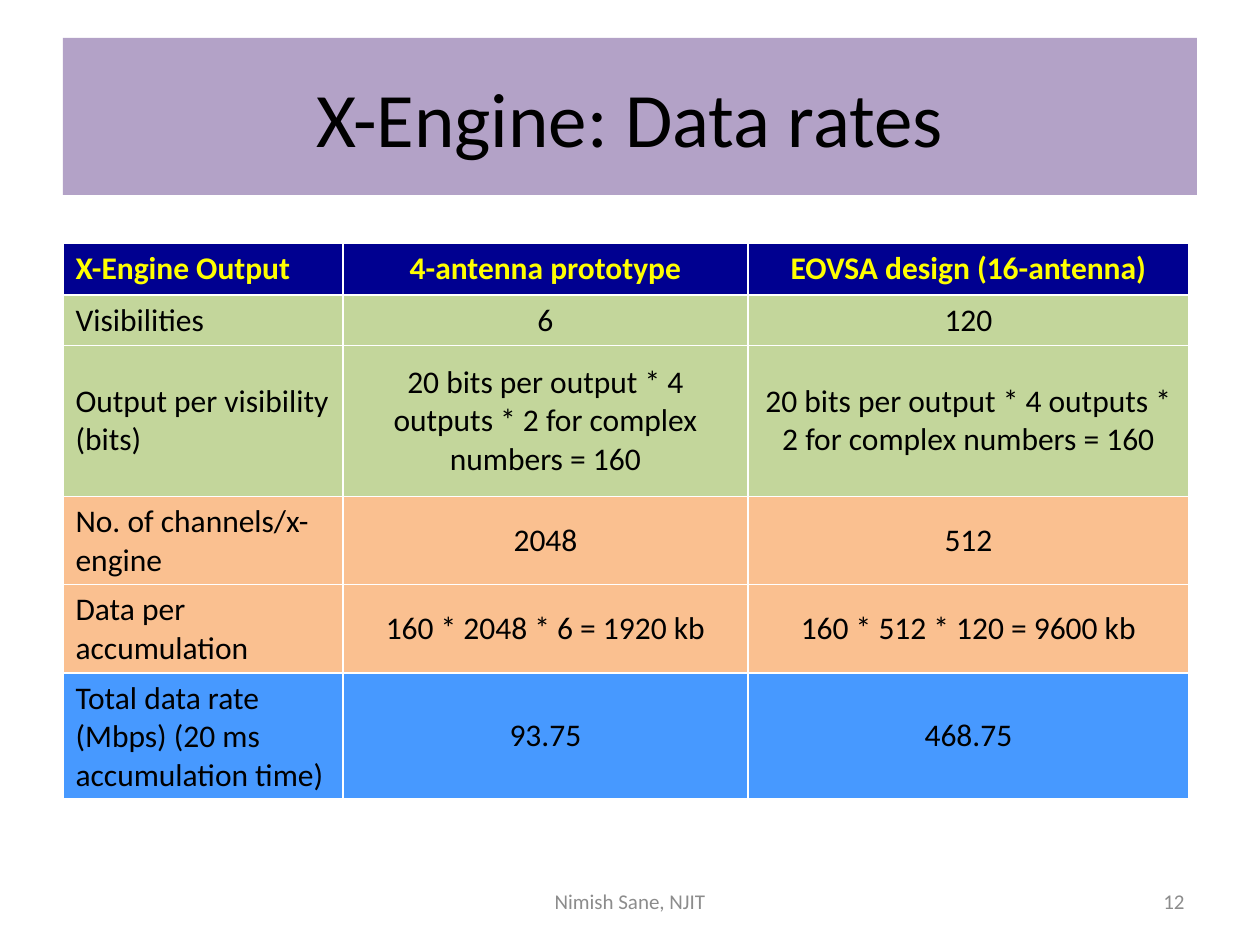
from pptx import Presentation
from pptx.dml.color import RGBColor
from pptx.enum.shapes import MSO_SHAPE
from pptx.enum.text import MSO_ANCHOR, PP_ALIGN
from pptx.util import Emu, Pt

PX = 914400 // 126
FONT = "Calibri"
LEFT, CENTER, RIGHT = PP_ALIGN.LEFT, PP_ALIGN.CENTER, PP_ALIGN.RIGHT
MIDDLE = MSO_ANCHOR.MIDDLE
RECTANGLE = MSO_SHAPE.RECTANGLE

BLACK = RGBColor(0x00, 0x00, 0x00)
GRAY = RGBColor(0x8C, 0x8C, 0x8C)
YELLOW = RGBColor(0xFF, 0xFF, 0x00)
LAVENDER = RGBColor(0xB3, 0xA2, 0xC7)
NAVY = RGBColor(0x00, 0x00, 0x90)
GREEN = RGBColor(0xC3, 0xD6, 0x9B)
ORANGE = RGBColor(0xFA, 0xC0, 0x90)
BLUE = RGBColor(0x47, 0x99, 0xFF)

COLUMN_WIDTHS = [280, 405, 441]
OUTPUT_BITS = "20 bits per output * 4 outputs * 2 for complex numbers = 160"
# Row height, fill, cell texts
DATA_RATES = [
    (52, NAVY, ["X-Engine Output", "4-antenna prototype", "EOVSA design (16-antenna)"]),
    (47, GREEN, ["Visibilities", "6", "120"]),
    (151, GREEN, ["Output per visibility (bits)", OUTPUT_BITS, OUTPUT_BITS]),
    (82, ORANGE, ["No. of channels/x-engine", "2048", "512"]),
    (82, ORANGE, ["Data per accumulation", "160 * 2048 * 6 = 1920 kb", "160 * 512 * 120 = 9600 kb"]),
    (116, BLUE, ["Total data rate (Mbps) (20 ms accumulation time)", "93.75", "468.75"]),
]


def px(*lengths):
    return [Emu(length * PX) for length in lengths]


def write(frame, text, size, color, align, bold=False):
    frame.text = text
    frame.word_wrap = True
    paragraph = frame.paragraphs[0]
    paragraph.alignment = align
    font = paragraph.runs[0].font
    font.name, font.size, font.bold = FONT, Pt(size), bold
    font.color.rgb = color


def add_title(slide, left, top, width, height):
    banner = slide.shapes.add_shape(RECTANGLE, *px(left, top, width, height))
    banner.shadow.inherit = False
    banner.fill.solid()
    banner.fill.fore_color.rgb = LAVENDER
    banner.line.fill.background()
    banner.text_frame.vertical_anchor = MIDDLE
    write(banner.text_frame, "X-Engine: Data rates", 44, BLACK, CENTER)


def add_data_rates(slide, left, top):
    """Place the table; its size follows from its columns and rows."""
    width, height = sum(COLUMN_WIDTHS), sum(row[0] for row in DATA_RATES)
    table = slide.shapes.add_table(
        len(DATA_RATES), len(COLUMN_WIDTHS), *px(left, top, width, height)).table
    for column, column_width in zip(table.columns, px(*COLUMN_WIDTHS)):
        column.width = column_width
    for r, (row_height, fill, texts) in enumerate(DATA_RATES):
        table.rows[r].height = Emu(row_height * PX)
        is_header = r == 0
        for c, text in enumerate(texts):
            cell = table.cell(r, c)
            cell.vertical_anchor = MIDDLE
            cell.fill.solid()
            cell.fill.fore_color.rgb = fill
            write(cell.text_frame, text, 18, YELLOW if is_header else BLACK,
                  CENTER if c else LEFT, is_header)


def add_footer(slide, left, top, width, height):
    """Center the author in the box and put the page number at its right end."""
    author_width, number_width = 400, 294
    for text, offset, part_width, align in [
        ("Nimish Sane, NJIT", (width - author_width) // 2, author_width, CENTER),
        ("12", width - number_width, number_width, RIGHT),
    ]:
        part = slide.shapes.add_textbox(*px(left + offset, top, part_width, height))
        part.text_frame.vertical_anchor = MIDDLE
        write(part.text_frame, text, 12, GRAY, align)


def main():
    presentation = Presentation()
    presentation.slide_width, presentation.slide_height = px(1260, 945)
    slide = presentation.slides.add_slide(presentation.slide_layouts[6])
    add_title(slide, 63, 38, 1134, 157)
    add_footer(slide, 63, 876, 1134, 50)
    add_data_rates(slide, 63, 243)
    presentation.save("out.pptx")


if __name__ == "__main__":
    main()
